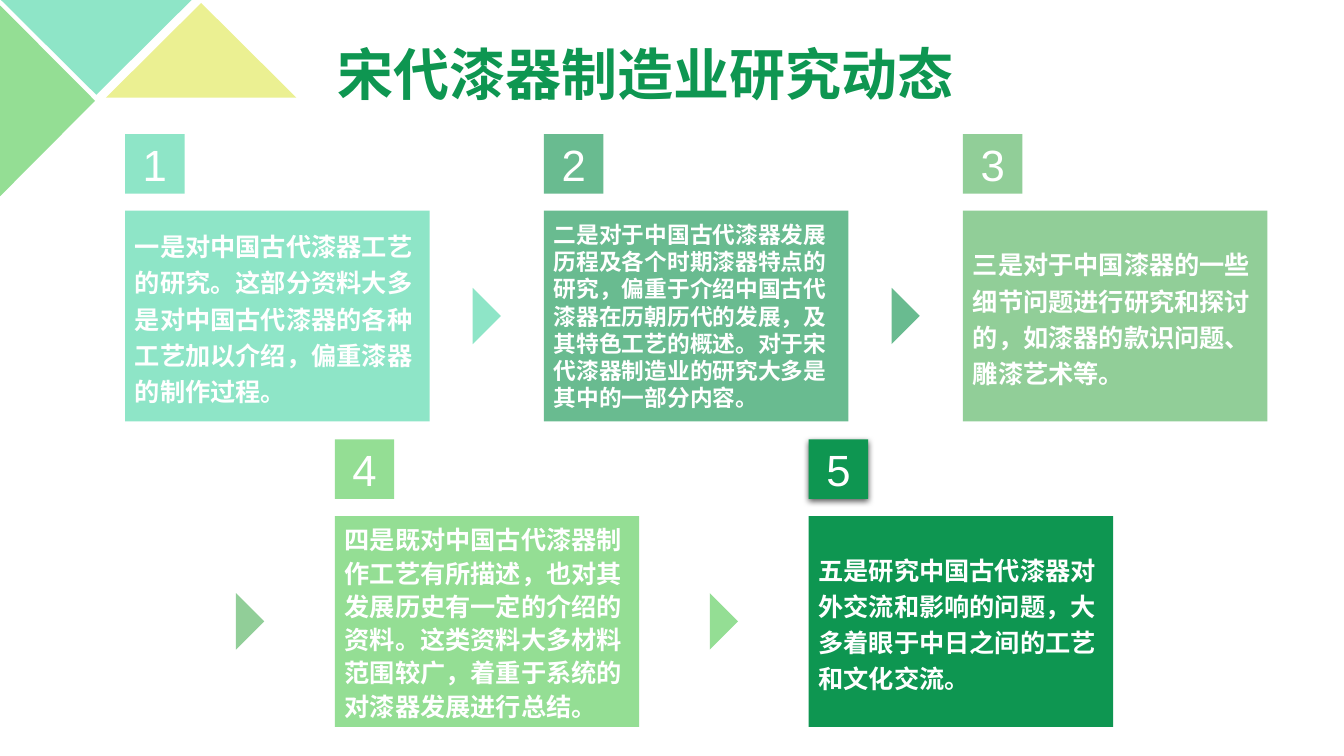
import pptx
import pptx.util
import pptx.dml.color
import pptx.enum.shapes
import pptx.enum.text
import pptx.oxml
import pptx.oxml.ns
from dataclasses import dataclass

Inches = pptx.util.Inches
SHAPE = pptx.enum.shapes.MSO_SHAPE
ALIGN = pptx.enum.text.PP_ALIGN
MIDDLE = pptx.enum.text.MSO_ANCHOR.MIDDLE


@dataclass(frozen=True)
class Theme:
    mint: str = "8EE5C7"
    jade: str = "69BB90"
    sage: str = "91CE98"
    lime: str = "94DE94"
    green: str = "0E9651"
    yellow: str = "EBF092"
    white: str = "FFFFFF"
    latin: str = "Arial"
    cjk: str = "Noto Sans CJK SC"
    title_size: float = 40
    number_size: float = 31.2
    body_size: float = 18
    small_size: float = 16.2


T = Theme()
WIDTH, HEIGHT = 13.33, 7.5

# Sizes shared by all cards
CARD_W, CARD_H = 3.02, 2.09
BADGE = 0.59
BADGE_RISE = 0.76
ARROW_W, ARROW_H = 0.56, 0.28

# Each card: text, colour, type size, line spacing
CARDS = [
    ("一是对中国古代漆器工艺的研究。这部分资料大多是对中国古代漆器的各种工艺加以介绍，偏重漆器的制作过程。",
     T.mint, T.body_size, 1.2),
    ("二是对于中国古代漆器发展历程及各个时期漆器特点的研究，偏重于介绍中国古代漆器在历朝历代的发展，"
     "及其特色工艺的概述。对于宋代漆器制造业的研究大多是其中的一部分内容。",
     T.jade, T.small_size, 1.0),
    ("三是对于中国漆器的一些细节问题进行研究和探讨的，如漆器的款识问题、雕漆艺术等。",
     T.sage, T.body_size, 1.2),
    ("四是既对中国古代漆器制作工艺有所描述，也对其发展历史有一定的介绍的资料。"
     "这类资料大多材料范围较广，着重于系统的对漆器发展进行总结。",
     T.lime, T.body_size, 1.1),
    ("五是研究中国古代漆器对外交流和影响的问题，大多着眼于中日之间的工艺和文化交流。",
     T.green, T.body_size, 1.2),
]

# Each row: left, top, distance between cards, first card, end card
ROWS = [(1.24, 2.09, 4.155, 0, 3), (3.32, 5.12, 4.7, 3, 5)]


def write(sp, text, size, color=T.white, bold=False, font=T.latin,
          align=ALIGN.LEFT, spacing=1.0):
    tf = sp.text_frame
    tf.word_wrap = True
    tf.auto_size = pptx.enum.text.MSO_AUTO_SIZE.NONE
    tf.vertical_anchor = MIDDLE
    p = tf.paragraphs[0]
    p.alignment = align
    p.line_spacing = spacing
    r = p.add_run()
    r.text = text
    r.font.size = pptx.util.Pt(size)
    r.font.bold = bold
    r.font.name = font
    r.font.color.rgb = pptx.dml.color.RGBColor.from_string(color)
    ea = pptx.oxml.parse_xml(
        f'<a:ea {pptx.oxml.ns.nsdecls("a")} typeface="{T.cjk}"/>')
    r.font._element.find(pptx.oxml.ns.qn("a:latin")).addnext(ea)


def add_block(slide, kind, left, top, width, height, color, rotation=0):
    sp = slide.shapes.add_shape(
        kind, Inches(left), Inches(top), Inches(width), Inches(height))
    sp.rotation = rotation
    sp.shadow.inherit = False
    sp.fill.solid()
    sp.fill.fore_color.rgb = pptx.dml.color.RGBColor.from_string(color)
    sp.line.fill.background()
    return sp


def add_shadow(sp):
    effects = sp._element.spPr.find(pptx.oxml.ns.qn("a:effectLst"))
    effects.append(pptx.oxml.parse_xml(
        f'<a:outerShdw {pptx.oxml.ns.nsdecls("a")} blurRad="57150" dist="19050"'
        ' dir="5400000" algn="ctr" rotWithShape="0">'
        '<a:srgbClr val="000000"><a:alpha val="63000"/></a:srgbClr></a:outerShdw>'))


def add_corner(slide, width, height):
    # Three triangles around the top left corner
    for left, top, rotation, color in [
            (-width / 4, 0.53, 90, T.lime),
            (0.01, 0, 180, T.mint),
            (1.05, 0.03, 0, T.yellow)]:
        add_block(slide, SHAPE.ISOSCELES_TRIANGLE, left, top,
                  width, height, color, rotation)


def add_title(slide, left, top, width, height):
    sp = slide.shapes.title
    sp.left, sp.top = Inches(left), Inches(top)
    sp.width, sp.height = Inches(width), Inches(height)
    write(sp, "宋代漆器制造业研究动态", T.title_size, T.green, bold=True, font=T.cjk)


def add_card(slide, left, top, number, text, color, size, spacing):
    # Body box
    box = add_block(slide, SHAPE.RECTANGLE, left, top, CARD_W, CARD_H, color)
    write(box, text, size, bold=True, spacing=spacing)
    # Number badge above it
    badge = add_block(slide, SHAPE.RECTANGLE, left, top - BADGE_RISE,
                      BADGE, BADGE, color)
    write(badge, str(number), T.number_size, align=ALIGN.CENTER)
    if number == len(CARDS):
        add_shadow(badge)


def add_row(slide, left, top, pitch, first, end):
    for i in range(first, end):
        x = left + (i - first) * pitch
        add_card(slide, x, top, i + 1, *CARDS[i])
        # Arrow in the middle of the gap before the card
        if i > 0:
            center = x - (pitch - CARD_W) / 2
            add_block(slide, SHAPE.ISOSCELES_TRIANGLE, center - ARROW_W / 2,
                      top + (CARD_H - ARROW_H) / 2, ARROW_W, ARROW_H,
                      CARDS[i - 1][1], 90)


def main():
    prs = pptx.Presentation()
    prs.slide_width, prs.slide_height = Inches(WIDTH), Inches(HEIGHT)
    slide = prs.slides.add_slide(prs.slide_layouts[5])
    add_corner(slide, 1.89, 0.94)
    add_title(slide, 3.25, 0.3, 9.28, 0.86)
    for row in ROWS:
        add_row(slide, *row)
    prs.save("out.pptx")


if __name__ == "__main__":
    main()
